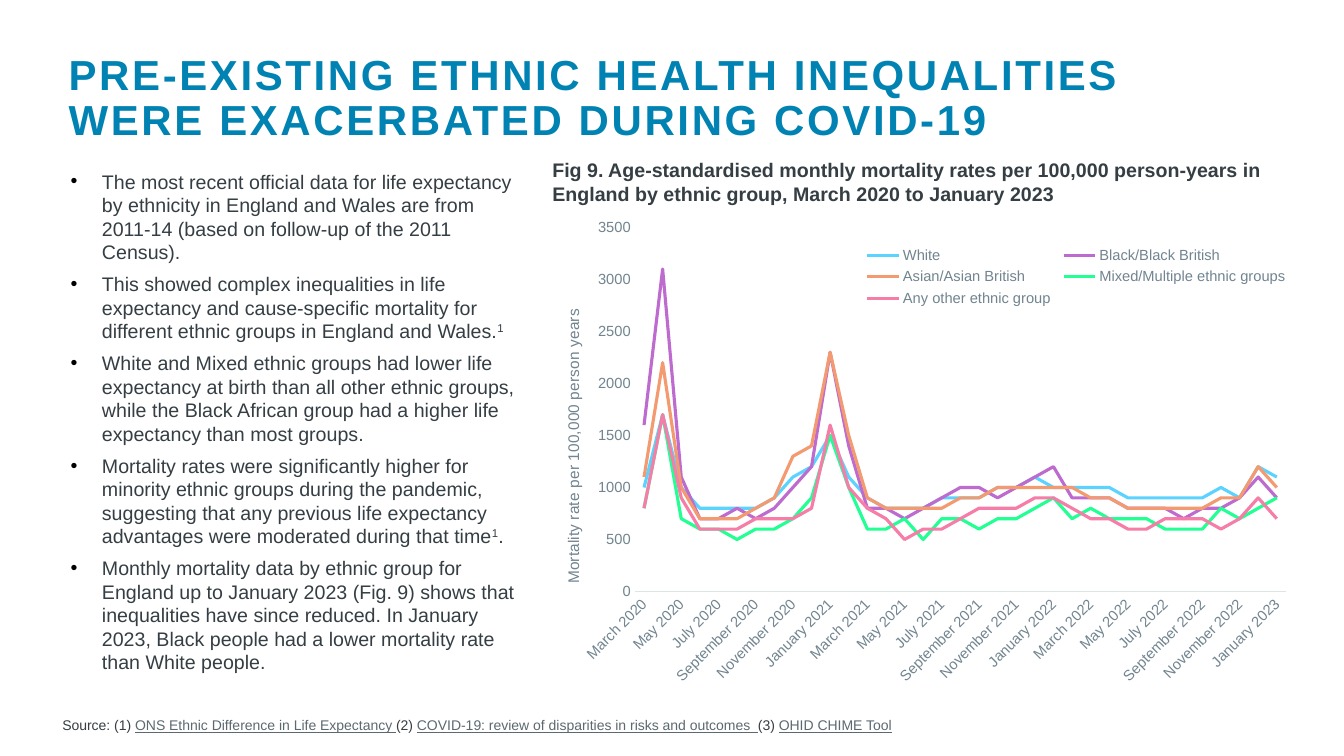
from dataclasses import dataclass

from lxml.etree import SubElement
from pptx import Presentation
from pptx.chart.data import CategoryChartData
from pptx.dml.color import RGBColor
from pptx.enum.chart import XL_CHART_TYPE, XL_LEGEND_POSITION, XL_TICK_MARK
from pptx.enum.text import MSO_ANCHOR, MSO_AUTO_SIZE, PP_ALIGN
from pptx.oxml import parse_xml
from pptx.oxml.ns import nsdecls, qn
from pptx.util import Cm, Pt

FONT = "Arial"
BLUE, DARK, LINK, GREY, PALE = "0083B3", "353E43", "5C6970", "71848F", "DEE3E5"


@dataclass
class Piece:
    text: str
    color: str = DARK
    bold: bool = False
    underline: bool = False
    superscript: bool = False


@dataclass
class Group:
    name: str
    color: str
    rates: list[int]


TITLE = "PRE-EXISTING ETHNIC HEALTH INEQUALITIES WERE EXACERBATED DURING COVID-19"
CAPTION = ("Fig 9. Age-standardised monthly mortality rates per 100,000 person-years in "
           "England by ethnic group, March 2020 to January 2023")
REFERENCE = Piece("1", superscript=True)
BULLETS = [
    [Piece("The most recent official data for life expectancy by ethnicity in England and "
           "Wales are from 2011-14 (based on follow-up of the 2011 Census).")],
    [Piece("This showed complex inequalities in life expectancy and cause-specific mortality "
           "for different ethnic groups in England and Wales."), REFERENCE],
    [Piece("White and Mixed ethnic groups had lower life expectancy at birth than all other "
           "ethnic groups, while the Black African group had a higher life expectancy than "
           "most groups.")],
    [Piece("Mortality rates were significantly higher for minority ethnic groups during the "
           "pandemic, suggesting that any previous life expectancy advantages were moderated "
           "during that time"), REFERENCE, Piece(".")],
    [Piece("Monthly mortality data by ethnic group for England up to January 2023 (Fig. 9) "
           "shows that inequalities have since reduced. In January 2023, Black people had a "
           "lower mortality rate than White people.")],
]
SOURCES = [
    Piece("Source: (1) "),
    Piece("ONS Ethnic Difference in Life Expectancy ", LINK, underline=True),
    Piece("(2) "),
    Piece("COVID-19: review of disparities in risks and outcomes  ", LINK, underline=True),
    Piece("(3) "),
    Piece("OHID CHIME Tool", LINK, underline=True),
]
MONTHS = ["January", "February", "March", "April", "May", "June", "July", "August",
          "September", "October", "November", "December"]
GROUPS = [
    Group("White", "5CD3FF", [
        1000, 1700, 1000, 800, 800, 800, 800, 900, 1100, 1200, 1500, 1100, 900, 800, 800, 800,
        900, 900, 900, 1000, 1000, 1100, 1000, 1000, 1000, 1000, 900, 900, 900, 900, 900, 1000,
        900, 1200, 1100]),
    Group("Black/Black British", "BD6BCE", [
        1600, 3100, 1100, 700, 700, 800, 700, 800, 1000, 1200, 2300, 1400, 800, 800, 700, 800,
        900, 1000, 1000, 900, 1000, 1100, 1200, 900, 900, 900, 800, 800, 800, 700, 800, 800,
        900, 1100, 900]),
    Group("Asian/Asian British", "F39A71", [
        1100, 2200, 1000, 700, 700, 700, 800, 900, 1300, 1400, 2300, 1500, 900, 800, 800, 800,
        800, 900, 900, 1000, 1000, 1000, 1000, 1000, 900, 900, 800, 800, 800, 800, 800, 900,
        900, 1200, 1000]),
    Group("Mixed/Multiple ethnic groups", "22FF93", [
        800, 1700, 700, 600, 600, 500, 600, 600, 700, 900, 1500, 1000, 600, 600, 700, 500,
        700, 700, 600, 700, 700, 800, 900, 700, 800, 700, 700, 700, 600, 600, 600, 800,
        700, 800, 900]),
    Group("Any other ethnic group", "F57DA7", [
        800, 1700, 900, 600, 600, 600, 700, 700, 700, 800, 1600, 1000, 800, 700, 500, 600,
        600, 700, 800, 800, 800, 900, 900, 800, 700, 700, 600, 600, 700, 700, 700, 600,
        700, 900, 700]),
]


def rgb(color: str) -> RGBColor:
    return RGBColor.from_string(color)


def set_font(font, size: float, color: str, bold: bool = False) -> None:
    font.name, font.size, font.bold = FONT, Pt(size), bold
    font.color.rgb = rgb(color)


def add_pieces(paragraph, pieces: list[Piece], size: float) -> None:
    for piece in pieces:
        run = paragraph.add_run()
        run.text = piece.text
        set_font(run.font, size, piece.color, piece.bold)
        if piece.underline:
            run.font.underline = True
        if piece.superscript:
            run.font._element.set("baseline", "30000")


def add_text_box(slide, left: float, top: float, width: float, height: float):
    frame = slide.shapes.add_textbox(Cm(left), Cm(top), Cm(width), Cm(height)).text_frame
    frame.word_wrap = True
    frame.margin_left = frame.margin_top = frame.margin_right = frame.margin_bottom = 0
    return frame


def add_bullet(paragraph) -> None:
    paragraph.space_after = Pt(6)
    properties = paragraph._p.get_or_add_pPr()
    properties.set("marL", str(Cm(0.79)))
    properties.set("indent", str(-Cm(0.79)))
    SubElement(SubElement(properties, qn("a:buClr")), qn("a:srgbClr")).set("val", "000000")
    SubElement(properties, qn("a:buFont")).set("typeface", FONT)
    SubElement(properties, qn("a:buChar")).set("char", "•")


def place(element, index: int, **settings: str | float) -> None:
    """Give a chart part a manual layout, in fractions of the chart."""
    for layout in element.findall(qn("c:layout")):
        element.remove(layout)
    values = "".join(f'<c:{name} val="{value}"/>' for name, value in settings.items())
    element.insert(index, parse_xml(
        f'<c:layout {nsdecls("c")}><c:manualLayout>{values}</c:manualLayout></c:layout>'))


def add_mortality_chart(slide) -> None:
    data = CategoryChartData()
    data.categories = [f"{MONTHS[i % 12]} {2020 + i // 12}" for i in range(2, 37)]
    for group in GROUPS:
        data.add_series(group.name, group.rates)
    chart = slide.shapes.add_chart(XL_CHART_TYPE.LINE, Cm(13.92), Cm(5.36), Cm(18.87),
                                   Cm(12.4), data).chart
    set_font(chart.font, 10, DARK)
    chart.has_title = False
    place(chart._chartSpace.chart.plotArea, 0, layoutTarget="inner", xMode="edge",
          yMode="edge", x=0.11, y=0.03, w=0.87, h=0.74)
    for series, group in zip(chart.plots[0].series, GROUPS):
        series.smooth = False
        series.format.line.color.rgb = rgb(group.color)
        series.format.line.width = Pt(2.25)

    # Axes
    months, rates = chart.category_axis, chart.value_axis
    for axis in (months, rates):
        axis.has_major_gridlines = False
        axis.major_tick_mark = axis.minor_tick_mark = XL_TICK_MARK.NONE
        set_font(axis.tick_labels.font, 10.5, GREY)
    months.format.line.color.rgb = rgb(PALE)
    months.format.line.width = Pt(0.75)
    months._element.txPr.find(qn("a:bodyPr")).set("rot", "-2700000")
    months._element.find(qn("c:noMultiLvlLbl")).addprevious(
        parse_xml(f'<c:tickLblSkip {nsdecls("c")} val="2"/>'))
    rates.format.line.fill.background()
    rates.minimum_scale, rates.maximum_scale, rates.major_unit = 0, 3500, 500
    add_pieces(rates.axis_title.text_frame.paragraphs[0],
               [Piece("Mortality rate per 100,000 person years", GREY)], 11)
    rates.axis_title.text_frame._txBody.find(qn("a:bodyPr")).set("rot", "-5400000")
    place(rates.axis_title._element, 1, xMode="edge", yMode="edge", x=0.01, y=0.19)

    # Legend
    chart.has_legend = True
    chart.legend.position = XL_LEGEND_POSITION.BOTTOM
    chart.legend.include_in_layout = False
    set_font(chart.legend.font, 10.5, GREY)
    place(chart.legend._element, 1, xMode="edge", yMode="edge", x=0.41, y=0.06, w=0.58, h=0.14)


def main() -> None:
    presentation = Presentation()
    presentation.slide_width, presentation.slide_height = Cm(33.87), Cm(19.05)
    slide = presentation.slides.add_slide(presentation.slide_layouts[5])

    # Title
    title = slide.shapes.title
    title.left, title.top, title.width, title.height = Cm(1.73), Cm(1.24), Cm(29.87), Cm(2.57)
    frame = title.text_frame
    frame.margin_left = 0
    frame.word_wrap = True
    frame.auto_size = MSO_AUTO_SIZE.NONE
    frame.vertical_anchor = MSO_ANCHOR.TOP
    paragraph = frame.paragraphs[0]
    paragraph.alignment, paragraph.line_spacing = PP_ALIGN.LEFT, 0.9
    add_pieces(paragraph, [Piece(TITLE, BLUE, bold=True)], 30)
    paragraph.runs[0].font._element.set("spc", "190")

    # Bulleted findings
    frame = add_text_box(slide, 1.78, 4.27, 11.51, 12.73)
    for number, pieces in enumerate(BULLETS):
        paragraph = frame.add_paragraph() if number else frame.paragraphs[0]
        add_bullet(paragraph)
        add_pieces(paragraph, pieces, 14)

    # Chart with its caption
    caption = add_text_box(slide, 13.92, 3.99, 19.53, 1.3)
    add_pieces(caption.paragraphs[0], [Piece(CAPTION, bold=True)], 14)
    add_mortality_chart(slide)

    # Sources
    sources = add_text_box(slide, 1.57, 18.06, 21.34, 0.5)
    add_pieces(sources.paragraphs[0], SOURCES, 10)

    presentation.save("out.pptx")


if __name__ == "__main__":
    main()
